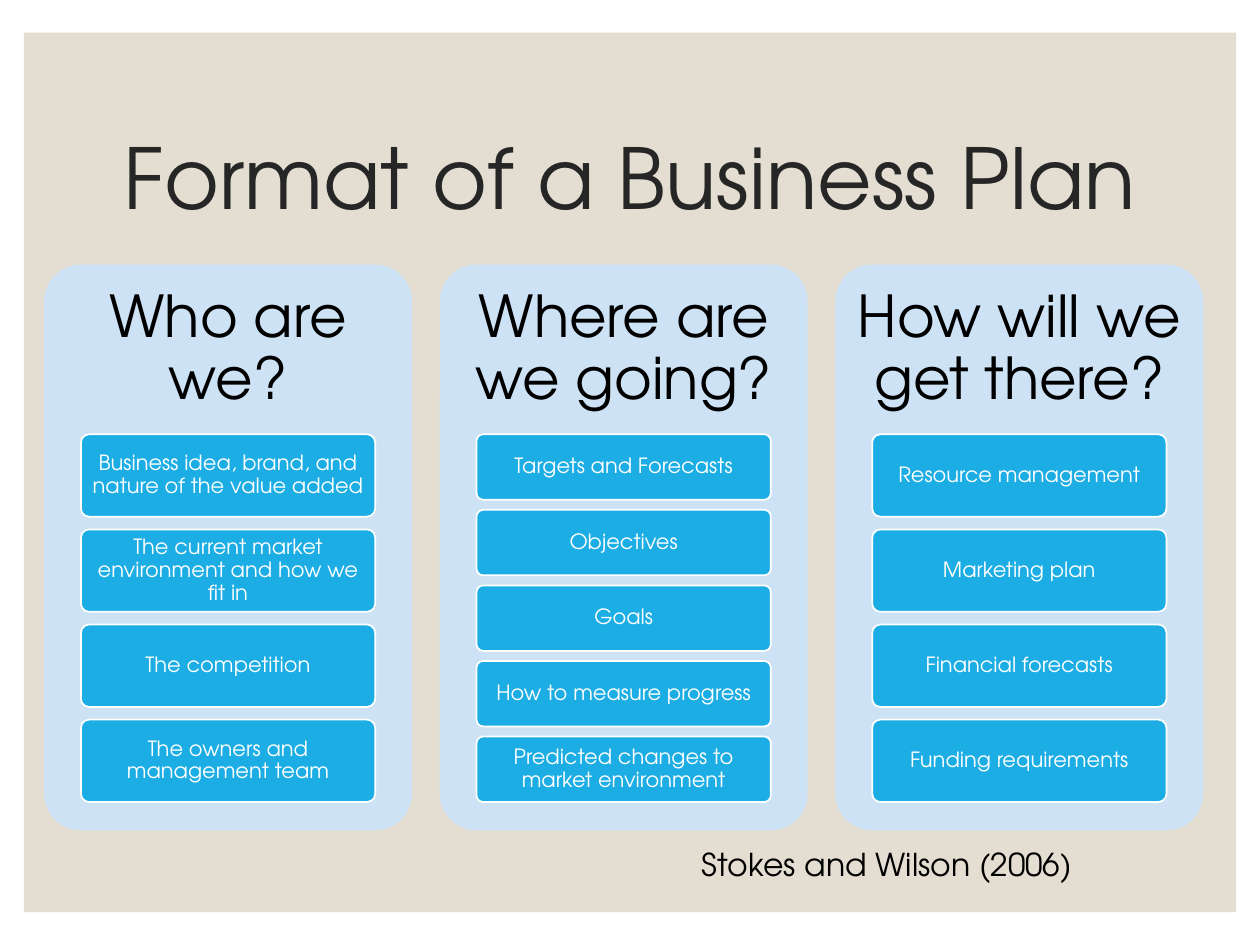
import pptx
import pptx.util
from pptx.dml.color import RGBColor
from pptx.enum.shapes import MSO_SHAPE
from pptx.enum.text import MSO_ANCHOR, MSO_AUTO_SIZE, PP_ALIGN
from pptx.util import Inches

FONT = "TeX Gyre Adventor"
COLORS = {
    "panel": "E3DED1", "title": "262626", "card": "CDE3F5",
    "item": "1CADE4", "white": "FFFFFF", "black": "000000",
}
COLUMNS = [
    ("Who are we?", [
        "Business idea, brand, and nature of the value added",
        "The current market environment and how we fit in",
        "The competition",
        "The owners and management team",
    ]),
    ("Where are we going?", [
        "Targets and Forecasts",
        "Objectives",
        "Goals",
        "How to measure progress",
        "Predicted changes to market environment",
    ]),
    ("How will we get there?", [
        "Resource management",
        "Marketing plan",
        "Financial forecasts",
        "Funding requirements",
    ]),
]


def rgb(name):
    return RGBColor.from_string(COLORS[name])


def add_box(s, kind, x, y, w, h, fill, line=None):
    sp = s.shapes.add_shape(kind, Inches(x), Inches(y), Inches(w), Inches(h))
    sp.shadow.inherit = False
    sp.fill.solid()
    sp.fill.fore_color.rgb = rgb(fill)
    if line:
        sp.line.color.rgb = rgb(line)
        sp.line.width = pptx.util.Pt(1)
    else:
        sp.line.fill.background()
    if kind == MSO_SHAPE.ROUNDED_RECTANGLE:
        sp.adjustments[0] = 0.1
    return sp


def write(sp, text, size, color, align=PP_ALIGN.CENTER, spacing=0.9, inset=None):
    tf = sp.text_frame
    tf.text = text
    tf.word_wrap = True
    tf.auto_size = MSO_AUTO_SIZE.NONE
    tf.vertical_anchor = MSO_ANCHOR.MIDDLE
    if inset is not None:
        tf.margin_left = tf.margin_right = Inches(inset)
        tf.margin_top = tf.margin_bottom = Inches(inset)
    p = tf.paragraphs[0]
    p.alignment = align
    p.line_spacing = spacing
    p.font.name = FONT
    p.font.size = pptx.util.Pt(size)
    p.font.color.rgb = rgb(color)


def add_title(s, x, y, w, h):
    title = s.shapes.title
    title.left, title.top = Inches(x), Inches(y)
    title.width, title.height = Inches(w), Inches(h)
    write(title, "Format of a Business Plan", 48, "title", PP_ALIGN.LEFT)


def add_panel(s, x, y, w, h):
    panel = add_box(s, MSO_SHAPE.RECTANGLE, x, y, w, h, "panel")
    s.shapes.title.element.addprevious(panel.element)  # behind the title


def add_column(s, x, y, w, h, heading, items):
    add_box(s, MSO_SHAPE.ROUNDED_RECTANGLE, x, y, w, h, "card")

    # Heading over the top 30% of the card
    head_h = 0.3 * h
    tb = s.shapes.add_textbox(Inches(x), Inches(y), Inches(w), Inches(head_h))
    write(tb, heading, 33, "black", inset=0.14)

    # Items share 65% of the card, with gaps of 2/13 of an item
    n = len(items)
    item_h = 0.65 * h / (n + (n - 1) * 2 / 13)
    for i, text in enumerate(items):
        top = y + head_h + i * item_h * 15 / 13
        item = add_box(s, MSO_SHAPE.ROUNDED_RECTANGLE, x + 0.1 * w, top,
                       0.8 * w, item_h, "item", "white")
        write(item, text, 12, "white", inset=0.05)


def add_citation(s, x, y, w, h):
    tb = s.shapes.add_textbox(Inches(x), Inches(y), Inches(w), Inches(h))
    write(tb, "Stokes and Wilson (2006)", 18, "black", PP_ALIGN.LEFT, 1.0)
    tb.text_frame.word_wrap = False


def main():
    prs = pptx.Presentation()
    prs.slide_width, prs.slide_height = Inches(10), Inches(7.5)
    s = prs.slides.add_slide(prs.slide_layouts[5])

    add_panel(s, 0.19, 0.26, 9.62, 6.98)
    add_title(s, 0.88, 0.7, 8.25, 1.5)
    for i, (heading, items) in enumerate(COLUMNS):
        add_column(s, 0.35 + 3.14 * i, 2.1, 2.92, 4.49, heading, items)
    add_citation(s, 5.47, 6.66, 3.28, 0.4)

    prs.save("out.pptx")


if __name__ == "__main__":
    main()
